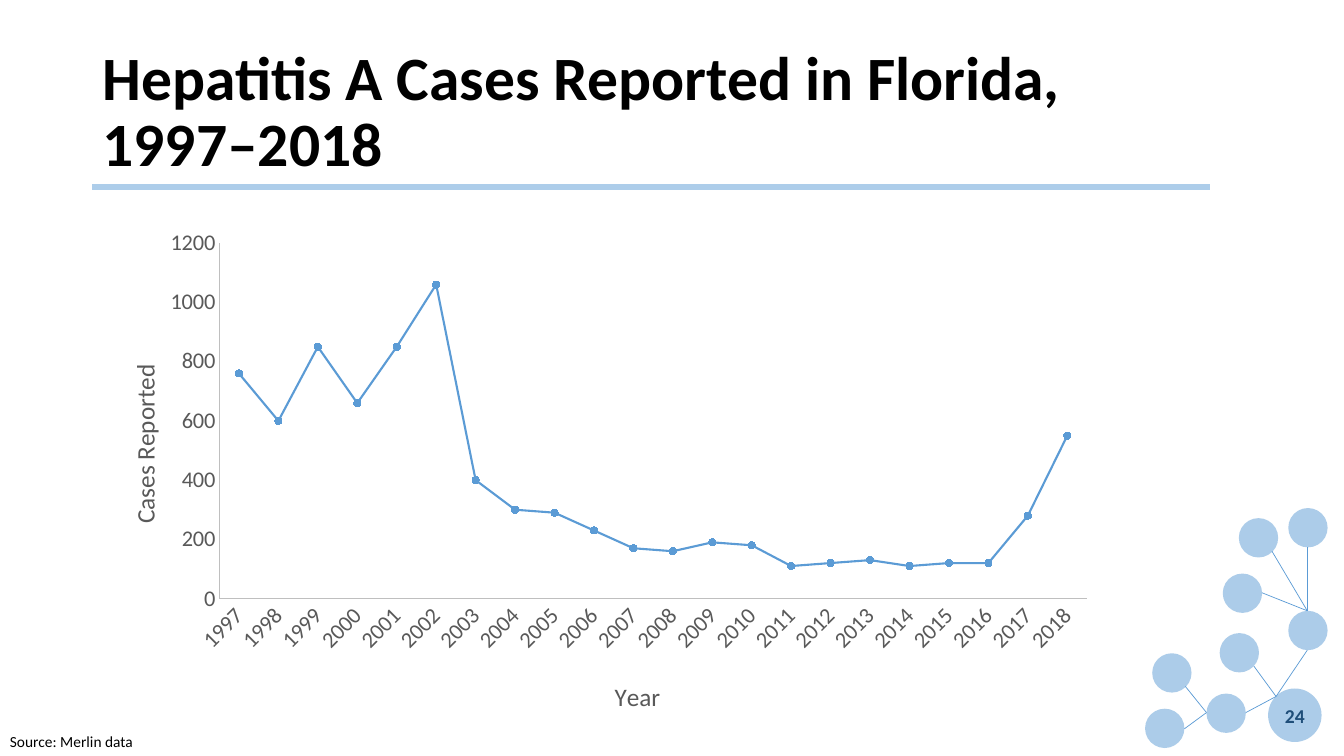
import pptx
import pptx.chart.data
import pptx.dml.color
import pptx.enum.chart
import pptx.enum.shapes
import pptx.enum.text
import pptx.oxml
import pptx.oxml.ns
import pptx.util

Pt = pptx.util.Pt
qn = pptx.oxml.ns.qn
FONT = "Calibri"
COLORS = {"blue": "5B9BD5", "rule": "ADCDEA", "black": "000000", "navy": "1F4E79",
          "label": "595959", "axis": "BFBFBF"}
CASES = [760, 600, 850, 660, 850, 1060, 400, 300, 290, 230, 170,
         160, 190, 180, 110, 120, 130, 110, 120, 120, 280, 550]
CIRCLES = [(905.8, 491.8, 38.2)] + [(left, top, 28.1) for left, top in [
    (920.2, 436.3), (817.9, 506.2), (823, 466.6), (884.9, 370.1),
    (873.4, 409.7), (861.8, 495.4), (871.2, 452.2), (920.2, 362.9)]]
BRANCHES = {
    (911.5, 497.5): [(933.8, 464.4), (889.9, 509), (895.7, 475.9)],
    (861.8, 509): [(846, 520.6), (846.7, 490.3)],
    (933.8, 436.3): [(933.8, 391), (908.6, 393.8), (901.4, 423.4)],
}


def rgb(name):
    return pptx.dml.color.RGBColor.from_string(COLORS[name])


def format_font(font, size, color, bold=False):
    font.name, font.size, font.bold = FONT, Pt(size), bold
    font.color.rgb = rgb(color)


def write_text(frame, text, size, color="black", bold=False, align="LEFT",
               anchor="TOP", spacing=None):
    frame.word_wrap = True
    frame.vertical_anchor = getattr(pptx.enum.text.MSO_ANCHOR, anchor)
    paragraph = frame.paragraphs[0]
    paragraph.alignment = getattr(pptx.enum.text.PP_ALIGN, align)
    paragraph.line_spacing = spacing
    run = paragraph.add_run()
    run.text = text
    format_font(run.font, size, color, bold)


def add_text(slide, box, text, size, **formatting):
    shape = slide.shapes.add_textbox(*map(Pt, box))
    write_text(shape.text_frame, text, size, **formatting)


def add_title(slide, box, text):
    title = slide.shapes.title
    title.left, title.top, title.width, title.height = map(Pt, box)
    write_text(title.text_frame, text, 44, bold=True, anchor="MIDDLE", spacing=0.9)


def add_circle(slide, left, top, diameter):
    circle = slide.shapes.add_shape(pptx.enum.shapes.MSO_SHAPE.OVAL,
                                    Pt(left), Pt(top), Pt(diameter), Pt(diameter))
    circle.shadow.inherit = False
    circle.line.fill.background()
    circle.fill.solid()
    circle.fill.fore_color.rgb = rgb("blue")
    color = circle._element.spPr.find(".//" + qn("a:srgbClr"))
    color.append(pptx.oxml.parse_xml(
        f'<a:alpha {pptx.oxml.ns.nsdecls("a")} val="50000"/>'))


def add_line(slide, start, end, color, width):
    line = slide.shapes.add_connector(pptx.enum.shapes.MSO_CONNECTOR.STRAIGHT,
                                      *map(Pt, start + end))
    line.line.color.rgb = rgb(color)
    line.line.width = Pt(width)
    line._element.spPr.append(pptx.oxml.parse_xml(
        f'<a:effectLst {pptx.oxml.ns.nsdecls("a")}/>'))


def make_layout(**fractions):
    items = "".join(f'<c:{key} val="{value}"/>' for key, value in fractions.items())
    return pptx.oxml.parse_xml(f'<c:layout {pptx.oxml.ns.nsdecls("c")}>'
                               f"<c:manualLayout>{items}</c:manualLayout></c:layout>")


def remove_layout(element):
    for layout in element.findall(qn("c:layout")):
        element.remove(layout)


def format_axis(axis, title, x, y, title_rotation, label_rotation):
    axis.has_major_gridlines = False
    axis.major_tick_mark = axis.minor_tick_mark = pptx.enum.chart.XL_TICK_MARK.NONE
    axis.format.line.color.rgb = rgb("axis")
    axis.format.line.width = Pt(0.75)
    format_font(axis.tick_labels.font, 16, "label")
    axis._element.find(qn("c:txPr")).find(qn("a:bodyPr")).set("rot", str(label_rotation * 60000))
    frame = axis.axis_title.text_frame
    write_text(frame, title, 18, color="label", align="CENTER")
    frame._txBody.find(qn("a:bodyPr")).set("rot", str(title_rotation * 60000))
    element = axis.axis_title._element
    remove_layout(element)
    element.find(qn("c:tx")).addnext(make_layout(xMode="edge", yMode="edge", x=x, y=y))


def add_cases_chart(slide, box):
    data = pptx.chart.data.CategoryChartData()
    data.categories = [str(year) for year in range(1997, 2019)]
    data.add_series("Series 1", CASES)
    chart = slide.shapes.add_chart(pptx.enum.chart.XL_CHART_TYPE.LINE_MARKERS,
                                   *map(Pt, box), data).chart
    format_font(chart.font, 10, "black")
    chart.has_legend = chart.has_title = False
    chart.plots[0].vary_by_categories = False
    series = chart.plots[0].series[0]
    series.smooth = False
    series.marker.style = pptx.enum.chart.XL_MARKER_STYLE.CIRCLE
    series.marker.size = 5
    series.marker.format.fill.solid()
    series.marker.format.fill.fore_color.rgb = rgb("blue")
    for line in (series.format.line, series.marker.format.line):
        line.color.rgb = rgb("blue")
    series.format.line.width = Pt(1.5)
    format_axis(chart.category_axis, "Year", 0.51, 0.9, 0, -45)
    format_axis(chart.value_axis, "Cases Reported", 0.03, 0.28, -90, 0)
    chart.value_axis.minimum_scale = 0
    chart.value_axis.maximum_scale = 1200
    chart.value_axis.major_unit = 200
    plot_area = chart._chartSpace.chart.plotArea
    remove_layout(plot_area)
    plot_area.insert(0, make_layout(layoutTarget="inner", xMode="edge", yMode="edge",
                                    x=0.125, y=0.05, w=0.855, h=0.7))


def main():
    """Build the hepatitis A slide and save it."""
    presentation = pptx.Presentation()
    presentation.slide_width, presentation.slide_height = Pt(960), Pt(540)
    slide = presentation.slides.add_slide(presentation.slide_layouts[5])
    for circle in CIRCLES:
        add_circle(slide, *circle)
    for hub, ends in BRANCHES.items():
        for end in ends:
            add_line(slide, hub, end, "blue", 0.5)
    add_line(slide, (66, 133.5), (864, 133.5), "rule", 4)
    add_title(slide, (66, 28.8, 791, 104.4),
              "Hepatitis A Cases Reported in Florida, 1997–2018")
    add_text(slide, (0, 519.2, 955.4, 20.6), "Source: Merlin data", 11)
    add_text(slide, (906.5, 496.8, 36.7, 28.8), "24", 14, color="navy", bold=True,
             align="CENTER", anchor="MIDDLE")
    add_cases_chart(slide, (66, 155.5, 725, 362.9))
    presentation.save("out.pptx")


if __name__ == "__main__":
    main()
